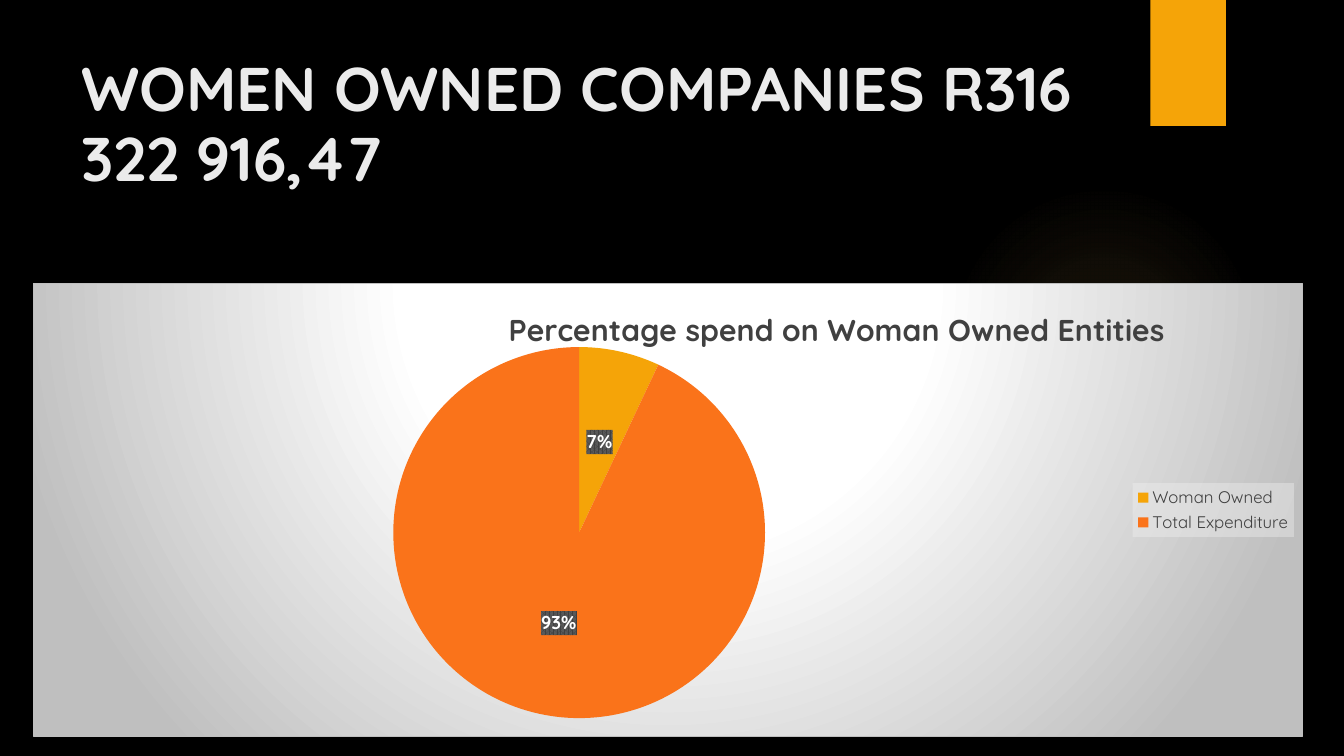
from dataclasses import dataclass

from lxml.etree import SubElement, fromstring
from pptx import Presentation
from pptx.chart.data import CategoryChartData
from pptx.dml.color import RGBColor
from pptx.enum.chart import XL_CHART_TYPE as ChartType
from pptx.enum.chart import XL_LABEL_POSITION as LabelPos
from pptx.enum.chart import XL_LEGEND_POSITION as LegendPos
from pptx.enum.shapes import MSO_SHAPE as Preset
from pptx.enum.text import MSO_ANCHOR as Anchor
from pptx.oxml.ns import qn
from pptx.util import Inches, Pt

WIDTH, HEIGHT = 13.33, 7.5
NAMESPACES = ('xmlns:a="http://schemas.openxmlformats.org/drawingml/2006/main" '
              'xmlns:c="http://schemas.openxmlformats.org/drawingml/2006/chart"')


@dataclass(frozen=True)
class Theme:
    font: str = "Quicksand"
    background: str = "000000"
    heading: str = "EBEBEB"
    amber: str = "F5A408"
    orange: str = "FA731A"
    glow: str = "FAC96A"
    white: str = "FFFFFF"
    grey: str = "BFBFBF"
    dark: str = "404040"
    label_weave: str = "595959"
    legend_panel: str = "F2F2F2"
    heading_size: float = 44
    chart_title_size: float = 21.6
    label_size: float = 13.3
    legend_size: float = 12
    chart_size: float = 10


def color_xml(color, alpha=100):
    return f'<a:srgbClr val="{color}"><a:alpha val="{alpha * 1000}"/></a:srgbClr>'


def radial_xml(stops, focus):
    """Circular gradient; stops are (position, colour, alpha), focus is l, t, r, b in percent."""
    marks = "".join(f'<a:gs pos="{at * 1000}">{color_xml(color, alpha)}</a:gs>'
                    for at, color, alpha in stops)
    sides = " ".join(f'{side}="{share * 1000}"' for side, share in zip("ltrb", focus))
    return (f'<a:gradFill {NAMESPACES}><a:gsLst>{marks}</a:gsLst>'
            f'<a:path path="circle"><a:fillToRect {sides}/></a:path></a:gradFill>')


def chart_format(fill):
    return fromstring(f'<c:spPr {NAMESPACES}>{fill}</c:spPr>')


def manual_layout(left, top, width=None, height=None):
    inner = '' if width is None else '<c:layoutTarget val="inner"/>'
    modes = '<c:xMode val="edge"/><c:yMode val="edge"/>'
    shares = "".join(f'<c:{name} val="{share}"/>'
                     for name, share in zip("xywh", (left, top, width, height))
                     if share is not None)
    return fromstring(f'<c:layout {NAMESPACES}><c:manualLayout>{inner}{modes}{shares}'
                      '</c:manualLayout></c:layout>')


class SlideBuilder:
    def __init__(self, deck, theme):
        self.theme = theme
        self.slide = deck.slides.add_slide(deck.slide_layouts[6])
        backdrop = self.slide.background.fill
        backdrop.solid()
        backdrop.fore_color.rgb = RGBColor.from_string(theme.background)

    def box(self, left, top, width, height):
        """Turn shares of the slide into lengths."""
        return (Inches(WIDTH * left), Inches(HEIGHT * top),
                Inches(WIDTH * width), Inches(HEIGHT * height))

    def style(self, font, size, color, bold=False):
        font.name, font.size, font.bold = self.theme.font, Pt(size), bold
        font.color.rgb = RGBColor.from_string(color)

    def shape(self, preset, place, color):
        form = self.slide.shapes.add_shape(preset, *self.box(*place))
        form.shadow.inherit = False
        form.line.fill.background()
        form.fill.solid()
        form.fill.fore_color.rgb = RGBColor.from_string(color)
        return form

    def glow(self, place):
        halo = self.shape(Preset.OVAL, place, self.theme.glow)
        stops = [(at, self.theme.glow, alpha) for at, alpha in ((0, 7), (36, 6), (69, 0))]
        solid = halo.fill._xPr.find(qn("a:solidFill"))
        solid.getparent().replace(solid, fromstring(radial_xml(stops, (50, 50, 50, 50))))

    def heading(self, words, place):
        frame = self.slide.shapes.add_textbox(*self.box(*place)).text_frame
        frame.word_wrap = True
        frame.vertical_anchor = Anchor.TOP
        frame.text = words
        frame.paragraphs[0].line_spacing = 0.95
        self.style(frame.paragraphs[0].runs[0].font,
                   self.theme.heading_size, self.theme.heading, bold=True)

    def pie(self, title, spend, place):
        theme = self.theme
        data = CategoryChartData()
        data.categories = list(spend)
        data.add_series("Series 1", [share for share, _ in spend.values()])
        chart = self.slide.shapes.add_chart(ChartType.PIE, *self.box(*place), data).chart
        self.style(chart.font, theme.chart_size, theme.white)

        chart.has_title = True
        caption = chart.chart_title
        caption.text_frame.text = title
        self.style(caption.text_frame.paragraphs[0].runs[0].font,
                   theme.chart_title_size, theme.dark, bold=True)
        caption.include_in_layout = False
        self.place_part(caption._element, manual_layout(0.37, 0.04))

        pie = chart.plots[0]
        pie.vary_by_categories = True
        for index, (_, color) in enumerate(spend.values()):
            piece = pie.series[0].points[index].format
            piece.fill.solid()
            piece.fill.fore_color.rgb = RGBColor.from_string(color)
            piece.line.fill.background()
        self.percent_labels(pie.series[0].data_labels)
        self.legend(chart)

        space = chart._chartSpace
        self.place_part(space.chart.plotArea, manual_layout(0.01, 0.14, 0.84, 0.82))
        stops = ((0, theme.white, 100), (39, theme.white, 100), (100, theme.grey, 100))
        border = f'<a:ln w="{Pt(0.75)}"><a:solidFill>{color_xml(theme.grey)}</a:solidFill></a:ln>'
        space.chart.addnext(chart_format(radial_xml(stops, (50, -80, 50, 180)) + border))

    def place_part(self, part, layout):
        """Give a chart part its manual position in place of the automatic one."""
        for automatic in part.findall(qn("c:layout")):
            part.remove(automatic)
        words = part.find(qn("c:tx"))
        if words is None:
            part.insert(0, layout)
        else:
            words.addnext(layout)

    def percent_labels(self, labels):
        theme = self.theme
        labels.show_percentage, labels.show_value = True, False
        labels.number_format, labels.number_format_is_linked = "0%", False
        labels.position = LabelPos.CENTER
        self.style(labels.font, theme.label_size, theme.white, bold=True)
        weave = (f'<a:pattFill prst="pct75"><a:fgClr>{color_xml(theme.dark)}</a:fgClr>'
                 f'<a:bgClr>{color_xml(theme.label_weave)}</a:bgClr></a:pattFill>')
        labels._element.find(qn("c:numFmt")).addnext(chart_format(weave))

    def legend(self, chart):
        chart.has_legend = True
        key = chart.legend
        key.position, key.include_in_layout = LegendPos.RIGHT, False
        self.style(key.font, self.theme.legend_size, self.theme.dark)
        panel = f'<a:solidFill>{color_xml(self.theme.legend_panel, 39)}</a:solidFill>'
        key._element.find(qn("c:txPr")).addprevious(chart_format(panel))


def main():
    deck = Presentation()
    deck.slide_width, deck.slide_height = Inches(WIDTH), Inches(HEIGHT)
    theme = Theme()
    page = SlideBuilder(deck, theme)
    page.glow((9.41 / WIDTH, 1.83 / HEIGHT, 3.08 / WIDTH, 3.08 / HEIGHT))
    page.shape(Preset.RECTANGLE, (11.41 / WIDTH, 0, 0.75 / WIDTH, 1 / 6), theme.amber)
    page.heading("WOMEN OWNED COMPANIES R316 322 916,47",
                 (0.71 / WIDTH, 0.5 / HEIGHT, 10.29 / WIDTH, 1.53 / HEIGHT))
    page.pie("Percentage spend on Woman Owned Entities",
             {"Woman Owned": (7, theme.amber), "Total Expenditure": (93, theme.orange)},
             (0.33 / WIDTH, 2.81 / HEIGHT, 12.59 / WIDTH, 4.5 / HEIGHT))
    deck.save("out.pptx")


if __name__ == "__main__":
    main()
